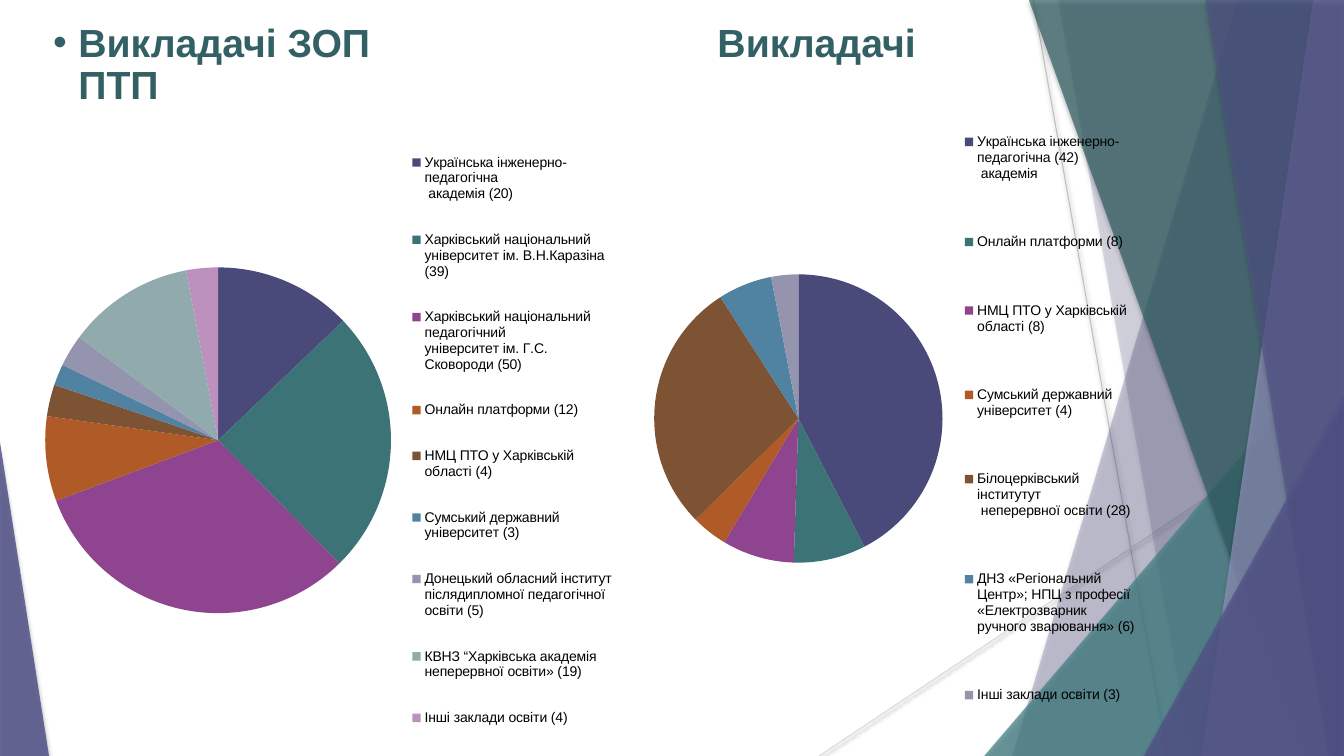
"""Build a slide with two pie charts of where teachers were trained."""
from lxml.etree import SubElement
from pptx import Presentation
from pptx.chart.data import CategoryChartData
from pptx.dml.color import RGBColor
from pptx.enum.chart import XL_CHART_TYPE, XL_LEGEND_POSITION
from pptx.enum.shapes import MSO_CONNECTOR, MSO_SHAPE
from pptx.enum.text import MSO_ANCHOR
from pptx.oxml import parse_xml
from pptx.oxml.ns import nsdecls, qn
from pptx.util import Pt

WIDE, HIGH = 960, 540
FONT = "Arial"
BLACK = RGBColor(0, 0, 0)
INDIGO = RGBColor(0x53, 0x54, 0x8A)
TEAL = RGBColor(0x43, 0x80, 0x86)
DEEP = RGBColor(0x32, 0x60, 0x65)
LILAC = RGBColor(0x93, 0x94, 0xBE)
GREY = RGBColor(0xBF, 0xBF, 0xBF)
PALE = RGBColor(0xD9, 0xD9, 0xD9)
SLICES = [RGBColor.from_string(c) for c in (
    "4A4A7A", "3B7377", "8F4490", "AF5A27", "7D5334",
    "5082A2", "9594AF", "91AAAD", "BC91BE")]

TITLE = ["Викладачі ЗОП", "\t", "Викладачі ПТП"]
LINES = [((738, 0), (834, HIGH), GREY), ((WIDE, 290), (585, HIGH), PALE)]
VEILS = [
    ("band", (884, 723), INDIGO, 30),
    ("band", (756, 851), INDIGO, 20),
    ("peak", (703, 240, 257, 1), TEAL, 72),
    ("band", (735, 930), DEEP, 70),
    ("band", (938, 858), LILAC, 70),
    ("band", (861, 949), INDIGO, 65),
    ("peak", (817, 283, 143, 1), INDIGO, 80),
    ("peak", (0, 316, 35, 0), INDIGO, 85),
]
CHARTS = [
    {"frame": (22, 89, 421, 451), "pie": (32.3, 191, 247, 247),
     "key": (296, 89, 145, 451),
     "rows": [
         ("Українська інженерно-педагогічна \n академія (20)", 13),
         ("Харківський національний \nуніверситет ім. В.Н.Каразіна (39)", 25),
         ("Харківський національний педагогічний\n"
          "університет ім. Г.С. Сковороди (50)", 32),
         ("Онлайн платформи (12)", 8),
         ("НМЦ ПТО у Харківській області (4)", 3),
         ("Сумський державний університет (3)", 2),
         ("Донецький обласний інститут післядипломної "
          "педагогічної освіти (5)", 3),
         ("КВНЗ “Харківська академія \nнеперервної освіти» (19)", 12),
         ("Інші заклади освіти (4)", 3)]},
    {"frame": (457, 58, 360, 482), "pie": (467.3, 196, 206, 206),
     "key": (689.5, 58, 123, 482),
     "rows": [
         ("Українська інженерно-педагогічна (42)\n академія", 42),
         ("Онлайн платформи (8)", 8),
         ("НМЦ ПТО у Харківській області (8)", 8),
         ("Сумський державний університет (4)", 4),
         ("Білоцерківський інститутут\n неперервної освіти (28)", 28),
         ("ДНЗ «Регіональний Центр»; НПЦ з професії "
          "«Електрозварник ручного зварювання» (6)", 6),
         ("Інші заклади освіти (3)", 3)]},
]


def shade(item, blur, dist, alpha):
    """Give an item a soft shadow below it."""
    item._element.spPr.append(parse_xml(
        f'<a:effectLst {nsdecls("a")}><a:outerShdw blurRad="{Pt(blur)}" '
        f'dist="{Pt(dist)}" dir="5400000" rotWithShape="0">'
        f'<a:srgbClr val="000000"><a:alpha val="{alpha * 1000}"/>'
        '</a:srgbClr></a:outerShdw></a:effectLst>'))


def add_line(shapes, start, end, color):
    """Add a thin background line."""
    line = shapes.add_connector(
        MSO_CONNECTOR.STRAIGHT, *(Pt(v) for v in start + end))
    line.line.color.rgb = color
    line.line.width = Pt(0.75)
    shade(line, 3.1, 1.6, 38)


def add_veil(shapes, kind, place, color, alpha):
    """Add a see-through band or triangle that reaches the slide's foot."""
    if kind == "band":
        top, foot = place
        pen = shapes.build_freeform(Pt(top), 0)
        pen.add_line_segments([(Pt(x), Pt(y)) for x, y in (
            (WIDE, 0), (WIDE, HIGH), (foot, HIGH))], close=True)
        veil = pen.convert_to_shape()
    else:
        left, top, width, tip = place
        veil = shapes.add_shape(MSO_SHAPE.ISOSCELES_TRIANGLE, Pt(left),
                                Pt(top), Pt(width), Pt(HIGH - top))
        veil.adjustments[0] = tip
    veil.fill.solid()
    veil.fill.fore_color.rgb = color
    tint = veil._element.spPr.find(".//" + qn("a:srgbClr"))
    SubElement(tint, qn("a:alpha"), val=str(alpha * 1000))
    veil.line.fill.background()
    shade(veil, 3, 2, 35)


def add_title(shapes):
    """Add the bulleted heading with a tab between its halves."""
    frame = shapes.add_textbox(Pt(38), Pt(15.6), Pt(677), Pt(62.5)).text_frame
    frame.word_wrap = True
    frame.vertical_anchor = MSO_ANCHOR.MIDDLE
    frame.margin_left = frame.margin_right = 0
    frame.margin_top = frame.margin_bottom = 0
    para = frame.paragraphs[0]
    para.line_spacing = 0.9
    para.space_before = Pt(10)
    props = para._p.get_or_add_pPr()
    props.set("marL", str(Pt(18)))
    props.set("indent", str(-Pt(18)))
    tint = SubElement(SubElement(props, qn("a:buClr")), qn("a:srgbClr"))
    tint.set("val", str(DEEP))
    SubElement(props, qn("a:buFont"), typeface=FONT)
    SubElement(props, qn("a:buChar"), char="•")
    tabs = SubElement(props, qn("a:tabLst"))
    SubElement(tabs, qn("a:tab"), pos=str(Pt(474.5)), algn="l")
    for text in TITLE:
        run = para.add_run()
        run.text = text
        run.font.name = FONT
        run.font.size = Pt(28)
        run.font.bold = True
        run.font.color.rgb = DEEP


def set_place(host, after, box, frame, inner):
    """Fix a chart part at a box given in slide points."""
    left, top, width, height = frame
    parts = {"x": (box[0] - left) / width, "y": (box[1] - top) / height,
             "w": box[2] / width, "h": box[3] / height}
    for old in host.findall(qn("c:layout")):
        host.remove(old)
    target = '<c:layoutTarget val="inner"/>' if inner else ""
    modes = "".join(f'<c:{k}Mode val="edge"/>' for k in "xy")
    sizes = "".join(f'<c:{k} val="{v:.4f}"/>' for k, v in parts.items())
    layout = parse_xml(f'<c:layout {nsdecls("c")}><c:manualLayout>{target}'
                       f'{modes}{sizes}</c:manualLayout></c:layout>')
    if after is None:
        host.insert(0, layout)
    else:
        after.addnext(layout)


def add_pie(shapes, frame, pie, key, rows):
    """Add a pie chart with its legend."""
    data = CategoryChartData()
    data.categories = [name for name, _ in rows]
    data.add_series("Series 1", [value for _, value in rows])
    chart = shapes.add_chart(
        XL_CHART_TYPE.PIE, *(Pt(v) for v in frame), data).chart
    chart.has_title = False
    chart.font.name = FONT
    chart.font.size = Pt(10)
    chart.font.color.rgb = BLACK
    chart.has_legend = True
    chart.legend.position = XL_LEGEND_POSITION.RIGHT
    chart.legend.include_in_layout = False
    plot = chart.plots[0]
    plot.vary_by_categories = True
    for index, color in enumerate(SLICES[:len(rows)]):
        point = plot.series[0].points[index].format
        point.fill.solid()
        point.fill.fore_color.rgb = color
        point.line.fill.background()
    root = chart._chartSpace
    legend = root.find(".//" + qn("c:legend"))
    set_place(root.find(".//" + qn("c:plotArea")), None, pie, frame, True)
    set_place(legend, legend.find(qn("c:legendPos")), key, frame, False)


def main():
    """Compose and save the slide."""
    deck = Presentation()
    deck.slide_width, deck.slide_height = Pt(WIDE), Pt(HIGH)
    shapes = deck.slides.add_slide(deck.slide_layouts[6]).shapes
    for line in LINES:
        add_line(shapes, *line)
    for veil in VEILS:
        add_veil(shapes, *veil)
    add_title(shapes)
    for chart in CHARTS:
        add_pie(shapes, **chart)
    deck.save("out.pptx")


if __name__ == "__main__":
    main()
